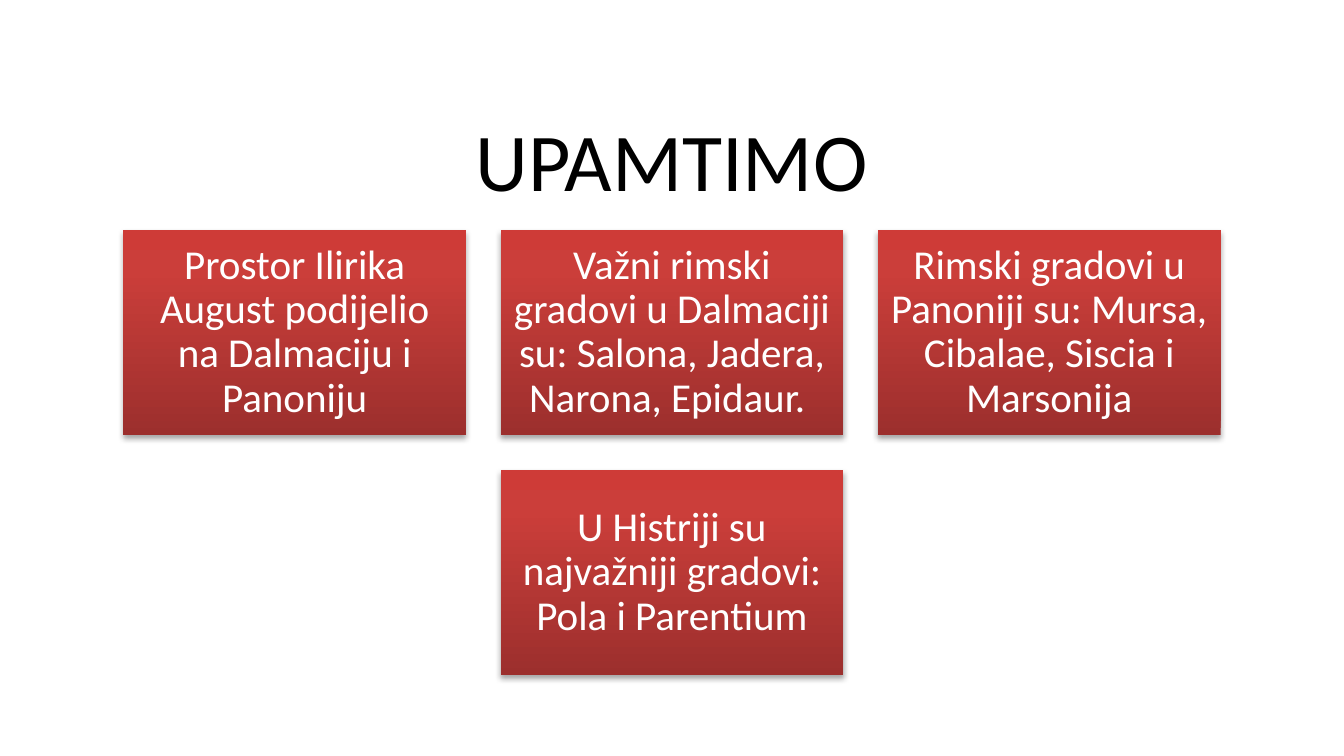
from lxml import etree
from pptx import Presentation
from pptx.dml.color import RGBColor
from pptx.enum.shapes import MSO_SHAPE
from pptx.enum.text import MSO_ANCHOR, PP_ALIGN
from pptx.oxml import parse_xml
from pptx.oxml.ns import nsdecls, qn
from pptx.util import Cm, Pt

COLORS = {"title": "000000", "card_text": "FFFFFF", "shadow": "000000",
          "dark": "9C2F2D", "mid": "CB3E3A", "light": "CE3B37"}
FONT = "Calibri"
ROWS = [
    ["Prostor Ilirika August podijelio na Dalmaciju i Panoniju",
     "Važni rimski gradovi u Dalmaciji su: Salona, Jadera, Narona, Epidaur. ",
     "Rimski gradovi u Panoniji su: Mursa, Cibalae, Siscia i Marsonija"],
    ["U Histriji su najvažniji gradovi: Pola i Parentium"],
]


def write_text(sp, text, size, color, inset_x=0.25, inset_y=0.13):
    tf = sp.text_frame
    tf.word_wrap = True
    tf.vertical_anchor = MSO_ANCHOR.MIDDLE
    tf.margin_left = tf.margin_right = Cm(inset_x)
    tf.margin_top = tf.margin_bottom = Cm(inset_y)
    p = tf.paragraphs[0]
    p.alignment = PP_ALIGN.CENTER
    p.line_spacing = 0.9
    r = p.add_run()
    r.text = text
    r.font.name = FONT
    r.font.size = Pt(size)
    r.font.color.rgb = RGBColor.from_string(COLORS[color])


def style_card(sp):
    """Vertical red gradient and a soft shadow below, no outline."""
    sp.line.fill.background()
    stops = "".join(
        f'<a:gs pos="{pos * 1000}"><a:srgbClr val="{COLORS[name]}"/></a:gs>'
        for pos, name in [(0, "dark"), (80, "mid"), (100, "light")])
    grad = parse_xml(
        f'<a:gradFill {nsdecls("a")} rotWithShape="1"><a:gsLst>{stops}</a:gsLst>'
        '<a:lin ang="16200000" scaled="0"/></a:gradFill>')
    sp_pr = sp.element.spPr
    sp_pr.find(qn("a:prstGeom")).addnext(grad)

    sp.shadow.inherit = False
    effects = sp_pr.find(qn("a:effectLst"))
    shadow = etree.SubElement(effects, qn("a:outerShdw"), blurRad="40000",
                              dist="23000", dir="5400000", rotWithShape="0")
    color = etree.SubElement(shadow, qn("a:srgbClr"), val=COLORS["shadow"])
    etree.SubElement(color, qn("a:alpha"), val="35000")


def add_title(slide, left, top, width, height):
    sp = slide.shapes.add_textbox(Cm(left), Cm(top), Cm(width), Cm(height))
    write_text(sp, "UPAMTIMO", 44, "title")


def add_cards(slide, left, top, width, card_w=6.48, card_h=3.89, gap=0.65):
    """Each row of cards is centred in the given width."""
    for i, row in enumerate(ROWS):
        row_w = len(row) * (card_w + gap) - gap
        x0 = left + (width - row_w) / 2
        y = top + i * (card_h + gap)
        for j, text in enumerate(row):
            x = x0 + j * (card_w + gap)
            sp = slide.shapes.add_shape(MSO_SHAPE.RECTANGLE, Cm(x), Cm(y),
                                        Cm(card_w), Cm(card_h))
            style_card(sp)
            write_text(sp, text, 22, "card_text", inset_x=0.23, inset_y=0.23)


def main():
    prs = Presentation()
    prs.slide_width, prs.slide_height = Cm(25.4), Cm(14.29)
    slide = prs.slides.add_slide(prs.slide_layouts[6])
    add_title(slide, 1.27, 2.13, 22.86, 1.98)
    add_cards(slide, 1.27, 4.34, 22.86)
    prs.save("out.pptx")


if __name__ == "__main__":
    main()
